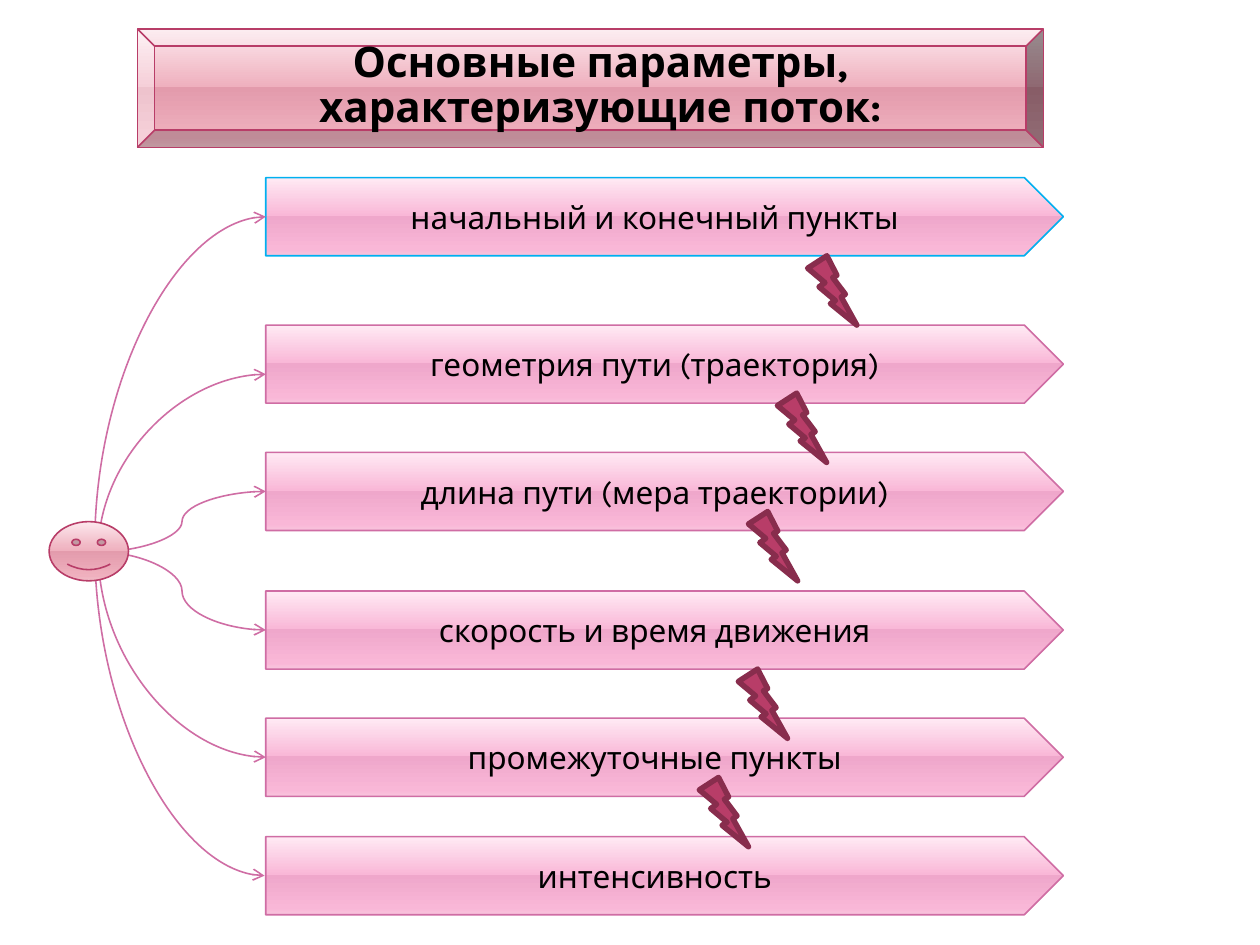
from lxml import etree
from pptx import Presentation
from pptx.dml.color import RGBColor
from pptx.enum import shapes, text
from pptx.oxml import ns
from pptx.util import Inches, Pt

FONT = "Karla"
BLACK = RGBColor(0x00, 0x00, 0x00)
PINK = RGBColor(0xCF, 0x6D, 0xA4)
BLUE = RGBColor(0x00, 0xB0, 0xF0)
CRIMSON = RGBColor(0xB8, 0x3D, 0x68)
WINE = RGBColor(0x88, 0x2D, 0x4D)
STOPS = (0, 49, 49, 92, 100)
PINK_GLOSS = [RGBColor.from_string(c) for c in ("FFEAF4", "F9B7D7", "EFA7CB", "F9B7D7", "F8C4DD")]
ROSE_GLOSS = [RGBColor.from_string(c) for c in ("FCE8ED", "EFB0BE", "E39BAC", "EFB0BE", "F0BEC9")]

BAR_LEFT, BAR_WIDTH, BAR_HEIGHT = 2.11, 6.33, 0.62
BARS = [
    (1.41, "начальный и конечный пункты", BLUE),
    (2.58, "геометрия пути (траектория)", PINK),
    (3.59, "длина пути (мера траектории)", PINK),
    (4.69, "скорость и время движения", PINK),
    (5.7, "промежуточные пункты", PINK),
    (6.64, "интенсивность", PINK),
]
BOLTS = [(6.41, 2.03), (6.17, 3.12), (5.94, 4.06), (5.86, 5.31), (5.55, 6.17)]
HUB = (0.78, 4.38)


def add_part(page, preset, box, line, width):
    part = page.shapes.add_shape(preset, *map(Inches, box))
    part.shadow.inherit = False
    part.line.color.rgb = line
    part.line.width = Pt(width)
    return part


def add_glossy(page, preset, box, gloss, line):
    part = add_part(page, preset, box, line, 0.9)
    part.fill.gradient()
    part.fill.gradient_angle = 270
    stops = part.element.spPr.find(".//" + ns.qn("a:gsLst"))
    for stop in list(stops):
        stops.remove(stop)
    for position, color in zip(STOPS, gloss):
        stop = etree.SubElement(stops, ns.qn("a:gs"), pos=str(position * 1000))
        etree.SubElement(stop, ns.qn("a:srgbClr"), val=str(color))
    return part


def add_bar(page, box, label, line):
    bar = add_glossy(page, shapes.MSO_SHAPE.PENTAGON, box, PINK_GLOSS, line)
    frame = bar.text_frame
    frame.word_wrap = True
    frame.vertical_anchor = text.MSO_ANCHOR.MIDDLE
    para = frame.paragraphs[0]
    para.text = label
    para.alignment = text.PP_ALIGN.CENTER
    para.font.size = Pt(18)
    para.font.name = FONT
    para.font.color.rgb = BLACK


def add_curve(page, start, end, both_ends=False):
    curve = page.shapes.add_connector(
        shapes.MSO_CONNECTOR.CURVE, *map(Inches, (*start, *end)))
    curve.line.color.rgb = PINK
    curve.line.width = Pt(0.9)
    line = curve.line._get_or_add_ln()
    for tag in ("a:headEnd", "a:tailEnd") if both_ends else ("a:tailEnd",):
        etree.SubElement(line, ns.qn(tag), type="arrow")
    etree.SubElement(curve.element.spPr, ns.qn("a:effectLst"))
    return curve


def add_quarter_curve(page, start, end):
    mid_x, mid_y = (start[0] + end[0]) / 2, (start[1] + end[1]) / 2
    half_w, half_h = abs(end[1] - start[1]) / 2, (end[0] - start[0]) / 2
    rises = end[1] < start[1]
    shift = half_h if rises else -half_h
    curve = add_curve(page, (mid_x + half_w, mid_y + shift), (mid_x - half_w, mid_y - shift))
    curve.element.spPr.find(ns.qn("a:prstGeom")).set("prst", "curvedConnector2")
    curve.element.spPr.find(ns.qn("a:xfrm")).set("rot", str((90 if rises else 270) * 60000))


def add_outer_curve(page, top, bottom):
    curve = add_curve(page, (BAR_LEFT, top), (BAR_LEFT - 0.01, bottom), both_ends=True)
    geometry = curve.element.spPr.find(ns.qn("a:prstGeom"))
    guides = geometry.find(ns.qn("a:avLst"))
    if guides is None:
        guides = etree.SubElement(geometry, ns.qn("a:avLst"))
    etree.SubElement(guides, ns.qn("a:gd"), name="adj1", fmla="val 13800000")


def add_links(page):
    first, *inner, last = [top + BAR_HEIGHT / 2 for top, _, _ in BARS]
    second, third, fourth, fifth = inner
    add_outer_curve(page, first, last)
    for y in (second + 0.08, fifth):
        add_quarter_curve(page, HUB, (BAR_LEFT, y))
    for y in (third, fourth):
        add_curve(page, HUB, (BAR_LEFT, y))


def add_bolt(page, box):
    bolt = add_part(page, shapes.MSO_SHAPE.LIGHTNING_BOLT, box, WINE, 3.15)
    bolt.fill.solid()
    bolt.fill.fore_color.rgb = CRIMSON


def add_title(page, box):
    plate = add_glossy(page, shapes.MSO_SHAPE.BEVEL, box, ROSE_GLOSS, CRIMSON)
    plate.adjustments[0] = 0.145
    title = page.shapes.title
    plate.element.addnext(title.element)
    left, top, width, height = box
    title.left, title.top = Inches(left + 0.55), Inches(top)
    title.width, title.height = Inches(width - 0.94), Inches(height - 0.03)
    frame = title.text_frame
    frame.word_wrap = True
    frame.auto_size = text.MSO_AUTO_SIZE.NONE
    frame.vertical_anchor = text.MSO_ANCHOR.MIDDLE
    para = frame.paragraphs[0]
    para.text = "Основные параметры, характеризующие поток:"
    para.alignment = text.PP_ALIGN.CENTER
    para.line_spacing = 0.9
    para.font.size = Pt(24)
    para.font.bold = True
    para.font.name = FONT
    para.font.color.rgb = BLACK


def main():
    deck = Presentation()
    deck.slide_width, deck.slide_height = Inches(10), Inches(7.5)
    page = deck.slides.add_slide(deck.slide_layouts[5])
    for top, label, line in BARS:
        add_bar(page, (BAR_LEFT, top, BAR_WIDTH, BAR_HEIGHT), label, line)
    add_links(page)
    add_glossy(page, shapes.MSO_SHAPE.SMILEY_FACE, (0.39, 4.14, 0.63, 0.47), ROSE_GLOSS, CRIMSON)
    for left, top in BOLTS:
        add_bolt(page, (left, top, 0.39, 0.55))
    add_title(page, (1.09, 0.23, 7.19, 0.94))
    deck.save("out.pptx")


if __name__ == "__main__":
    main()
